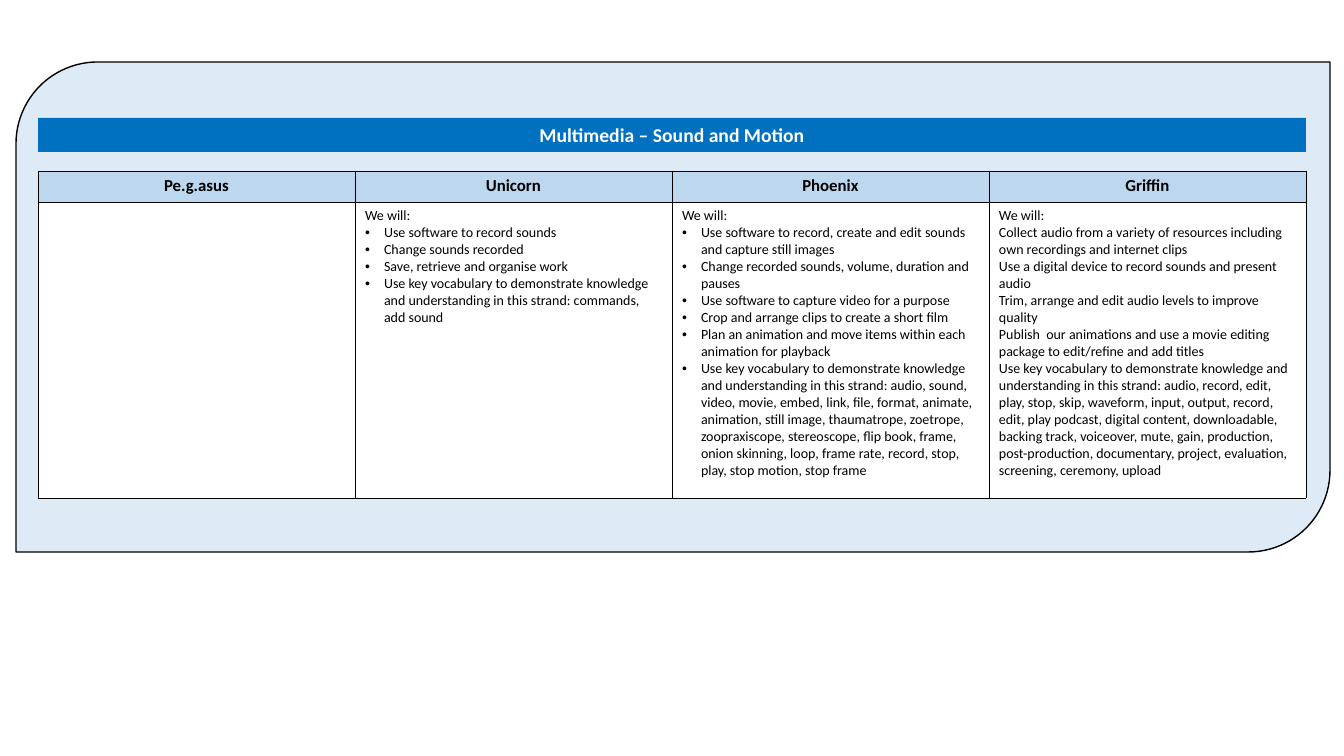
"""Build a slide with the sound and motion skills of four classes."""
from lxml import etree
from pptx import Presentation
from pptx.dml.color import RGBColor
from pptx.enum.shapes import MSO_SHAPE as Shape
from pptx.enum.text import MSO_ANCHOR as Anchor, MSO_AUTO_SIZE as Fit, PP_ALIGN as Align
from pptx.oxml import parse_xml
from pptx.oxml.ns import nsdecls, qn
from pptx.util import Pt

PX = 914400 / 100.8
BLACK = RGBColor(0x00, 0x00, 0x00)
WHITE = RGBColor(0xFF, 0xFF, 0xFF)
PALE = RGBColor(0xDE, 0xEB, 0xF7)
SKY = RGBColor(0xBD, 0xD7, 0xEE)
BLUE = RGBColor(0x00, 0x70, 0xC0)


def px(*sizes):
    return [round(size * PX) for size in sizes]


def write(frame, lines, size=10, color=BLACK, bold=False, align=Align.LEFT, bullets=False):
    for i, line in enumerate(lines):
        para = frame.paragraphs[0] if i == 0 else frame.add_paragraph()
        para.alignment = align
        run = para.add_run()
        run.text = line
        font = run.font
        font.name, font.size, font.bold = "Calibri", Pt(size), bold
        font.color.rgb = color
        if bullets and i > 0:
            props = para._p.get_or_add_pPr()
            indent = px(19)[0]
            props.set("marL", str(indent))
            props.set("indent", str(-indent))
            etree.SubElement(props, qn("a:buFont")).set("typeface", "Arial")
            etree.SubElement(props, qn("a:buChar")).set("char", "•")


CLASSES = [
    ("Pe.g.asus", False, []),
    ("Unicorn", True, [
        "We will:",
        "Use software to record sounds",
        "Change sounds recorded",
        "Save, retrieve and organise work",
        "Use key vocabulary to demonstrate knowledge and understanding in this strand: "
        "commands, add sound",
    ]),
    ("Phoenix", True, [
        "We will:",
        "Use software to record, create and edit sounds and capture still images",
        "Change recorded sounds, volume, duration and pauses",
        "Use software to capture video for a purpose",
        "Crop and arrange clips to create a short film",
        "Plan an animation and move items within each animation for playback",
        "Use key vocabulary to demonstrate knowledge and understanding in this strand: "
        "audio, sound, video, movie, embed, link, file, format, animate, animation, "
        "still image, thaumatrope, zoetrope, zoopraxiscope, stereoscope, flip book, frame, "
        "onion skinning, loop, frame rate, record, stop, play, stop motion, stop frame",
    ]),
    ("Griffin", False, [
        "We will:",
        "Collect audio from a variety of resources including own recordings and internet clips",
        "Use a digital device to record sounds and present audio",
        "Trim, arrange and edit audio levels to improve quality",
        "Publish  our animations and use a movie editing package to edit/refine and add titles",
        "Use key vocabulary to demonstrate knowledge and understanding in this strand: "
        "audio, record, edit, play, stop, skip, waveform, input, output, record, edit, "
        "play podcast, digital content, downloadable, backing track, voiceover, mute, gain, "
        "production, post-production, documentary, project, evaluation, screening, "
        "ceremony, upload",
    ]),
]

deck = Presentation()
deck.slide_width, deck.slide_height = px(1344, 756)
slide = deck.slides.add_slide(deck.slide_layouts[5])
shapes = slide.shapes

panel = shapes.add_shape(Shape.ROUND_2_DIAG_RECTANGLE, *px(16, 62, 1314, 490))
panel.shadow.inherit = False
panel.fill.solid()
panel.fill.fore_color.rgb = PALE
panel.line.color.rgb = BLACK
panel.line.width = Pt(1)

title = shapes.title
panel.element.addnext(title.element)
title.left, title.top, title.width, title.height = px(38, 118, 1268, 34)
title.fill.solid()
title.fill.fore_color.rgb = BLUE
title.text_frame.auto_size = Fit.NONE
title.text_frame.vertical_anchor = Anchor.MIDDLE
write(title.text_frame, ["Multimedia – Sound and Motion"],
      size=14, color=WHITE, bold=True, align=Align.CENTER)

table = shapes.add_table(2, len(CLASSES), *px(38, 171, 1268, 327)).table
table.rows[0].height, table.rows[1].height = px(31, 296)
for col, (name, bullets, skills) in enumerate(CLASSES):
    head, body = table.cell(0, col), table.cell(1, col)
    write(head.text_frame, [name], size=12, bold=True, align=Align.CENTER)
    write(body.text_frame, skills, bullets=bullets)
    for cell, color in ((head, SKY), (body, WHITE)):
        cell.fill.solid()
        cell.fill.fore_color.rgb = color
        props = cell._tc.get_or_add_tcPr()
        for i, side in enumerate("LRTB"):
            props.insert(i, parse_xml(
                f'<a:ln{side} {nsdecls("a")} w="{Pt(0.5)}"><a:solidFill>'
                f'<a:srgbClr val="{BLACK}"/></a:solidFill></a:ln{side}>'))

deck.save("out.pptx")
